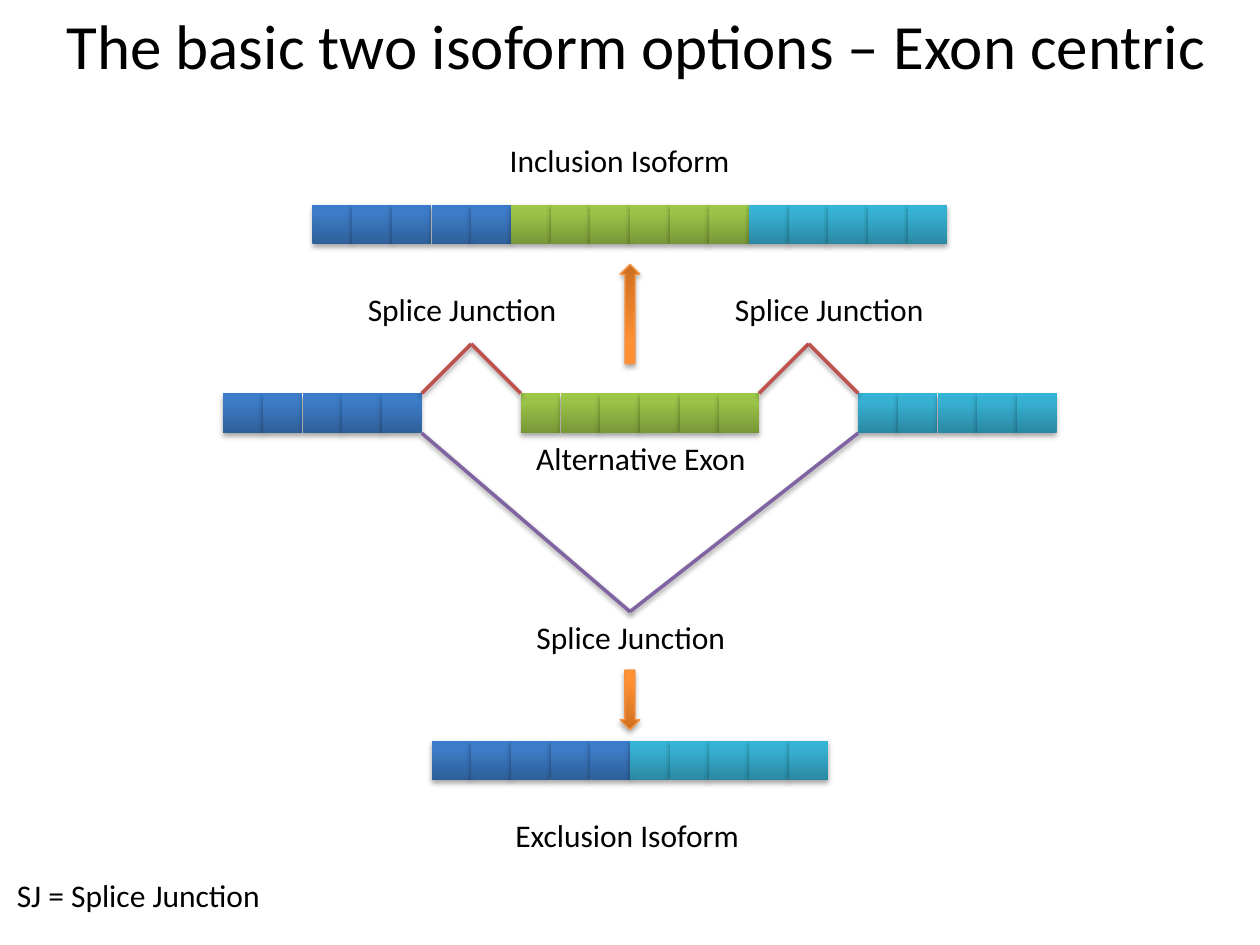
import copy

import lxml.etree
import pptx
import pptx.dml.color
import pptx.enum.dml
import pptx.enum.shapes
import pptx.enum.text
import pptx.oxml.ns
import pptx.util

Cm = pptx.util.Cm
Pt = pptx.util.Pt
SHAPE = pptx.enum.shapes.MSO_SHAPE
ALIGN = pptx.enum.text.PP_ALIGN

CELL = 0.8  # side of one exon square, cm
MID_TOP = 7.93  # top of the middle row
PEAK = 6.93  # tip of the upper junctions
DIP = 12.33  # tip of the lower junction

HEX = {
    "text": "000000",
    "shade": "000000",
    "red": "C0504D",
    "purple": "8064A2",
    "edge": "F69240",
}
# Gradient stops at 0, 80 and 100 percent
GRAD = {
    "blue": ("2F5F99", "3D7CC7", "3A7CCB"),
    "green": ("779737", "9BC348", "9DC746"),
    "cyan": ("2A88A2", "37B1D2", "34B4D6"),
    "orange": ("CC6E20", "FF9034", "FF9136"),
}
STOPS = (0, 0.8, 1)

FRAME = {
    "word_wrap": False,
    "auto_size": pptx.enum.text.MSO_AUTO_SIZE.SHAPE_TO_FIT_TEXT,
    "vertical_anchor": pptx.enum.text.MSO_ANCHOR.TOP,
}


def put(item, form):
    for name, value in form.items():
        setattr(item, name, value)


def rgb(name):
    return pptx.dml.color.RGBColor.from_string(HEX.get(name, name))


def shade(shape, alpha, dist):
    """Add a soft shadow that falls straight down."""
    qn = pptx.oxml.ns.qn
    node = lxml.etree.SubElement
    effect = node(shape._element.spPr, qn("a:effectLst"))
    outer = node(effect, qn("a:outerShdw"), blurRad=str(Pt(3.1)),
                 dist=str(Pt(dist)), dir="5400000", rotWithShape="0")
    color = node(outer, qn("a:srgbClr"), val=HEX["shade"])
    node(color, qn("a:alpha"), val=str(alpha * 1000))


def blend(shape, tone):
    """Fill with a three-stop gradient, dark at the bottom."""
    fill = shape.fill
    fill.gradient()
    fill.gradient_angle = 90
    last = fill.gradient_stops[-1]._gs
    last.addnext(copy.deepcopy(last))
    for stop, place, color in zip(fill.gradient_stops, STOPS, GRAD[tone]):
        stop.position = place
        stop.color.rgb = rgb(color)


def add_exon(slide, left, top, count, tone):
    for i in range(count):
        cell = slide.shapes.add_shape(
            SHAPE.RECTANGLE, Cm(left + i * CELL), Cm(top), Cm(CELL), Cm(CELL))
        blend(cell, tone)
        cell.line.fill.background()
        shade(cell, 35, 1.8)
    return left + count * CELL


def add_splice(slide, start, tip, end, color):
    """Join two exons by two lines that meet at the tip."""
    for a, b in ((start, tip), (tip, end)):
        line = slide.shapes.add_connector(
            pptx.enum.shapes.MSO_CONNECTOR.STRAIGHT, *map(Cm, a + b))
        line.line.color.rgb = rgb(color)
        line.line.width = Pt(2)
        shade(line, 38, 1.6)


def add_arrow(slide, top, height, turn):
    arrow = slide.shapes.add_shape(
        SHAPE.DOWN_ARROW, Cm(12.5), Cm(top), Cm(0.4), Cm(height))
    blend(arrow, "orange")
    arrow.line.color.rgb = rgb("edge")
    put(arrow.line, {"width": Pt(0.75)})
    put(arrow, {"rotation": turn})
    shade(arrow, 35, 1.8)


def add_label(slide, text, left, top, width, height=1.03, size=18,
              align=ALIGN.RIGHT):
    box = slide.shapes.add_textbox(*map(Cm, (left, top, width, height)))
    put(box.text_frame, FRAME)
    para = box.text_frame.paragraphs[0]
    para.alignment = align
    run = para.add_run()
    run.text = text
    put(run.font, {"size": Pt(size), "name": "Calibri"})
    run.font.color.rgb = rgb("text")


def main():
    deck = pptx.Presentation()
    put(deck, {"slide_width": Cm(25.4), "slide_height": Cm(19.05)})
    slide = deck.slides.add_slide(deck.slide_layouts[6])

    # Exon rows: inclusion, gene, exclusion
    rows = (
        (4.13, ((6.3, 5, "blue"), (10.3, 6, "green"), (15.1, 5, "cyan"))),
        (MID_TOP, ((4.5, 5, "blue"), (10.5, 6, "green"), (17.3, 5, "cyan"))),
        (14.93, ((8.7, 5, "blue"), (12.7, 5, "cyan"))),
    )
    for top, exons in rows:
        for left, count, tone in exons:
            add_exon(slide, left, top, count, tone)

    # Splice junctions
    for left in (8.5, 15.3):
        add_splice(slide, (left, MID_TOP), (left + 1, PEAK),
                   (left + 2, MID_TOP), "red")
    base = MID_TOP + CELL
    add_splice(slide, (8.5, base), (12.7, DIP), (17.3, base), "purple")

    # Arrows to the two isoforms
    add_arrow(slide, 5.33, 2.0, 180)
    add_arrow(slide, 13.51, 1.2, 0)

    # Title and labels
    add_label(slide, "The basic two isoform options – Exon centric",
              1.09, 0, 23.7, 1.8, 36, ALIGN.LEFT)
    labels = (
        ("Inclusion Isoform", 9.98, 2.72, 4.98),
        ("Splice Junction", 7.1, 5.72, 4.37),
        ("Splice Junction", 14.5, 5.72, 4.37),
        ("Alternative Exon", 10.5, 8.73, 4.78),
        ("Splice Junction", 10.5, DIP, 4.37),
        ("Exclusion Isoform", 10.1, 16.33, 5.05),
        ("SJ = Splice Junction", 0, 17.53, 5.49),
    )
    for label in labels:
        add_label(slide, *label)

    deck.save("out.pptx")


if __name__ == "__main__":
    main()
